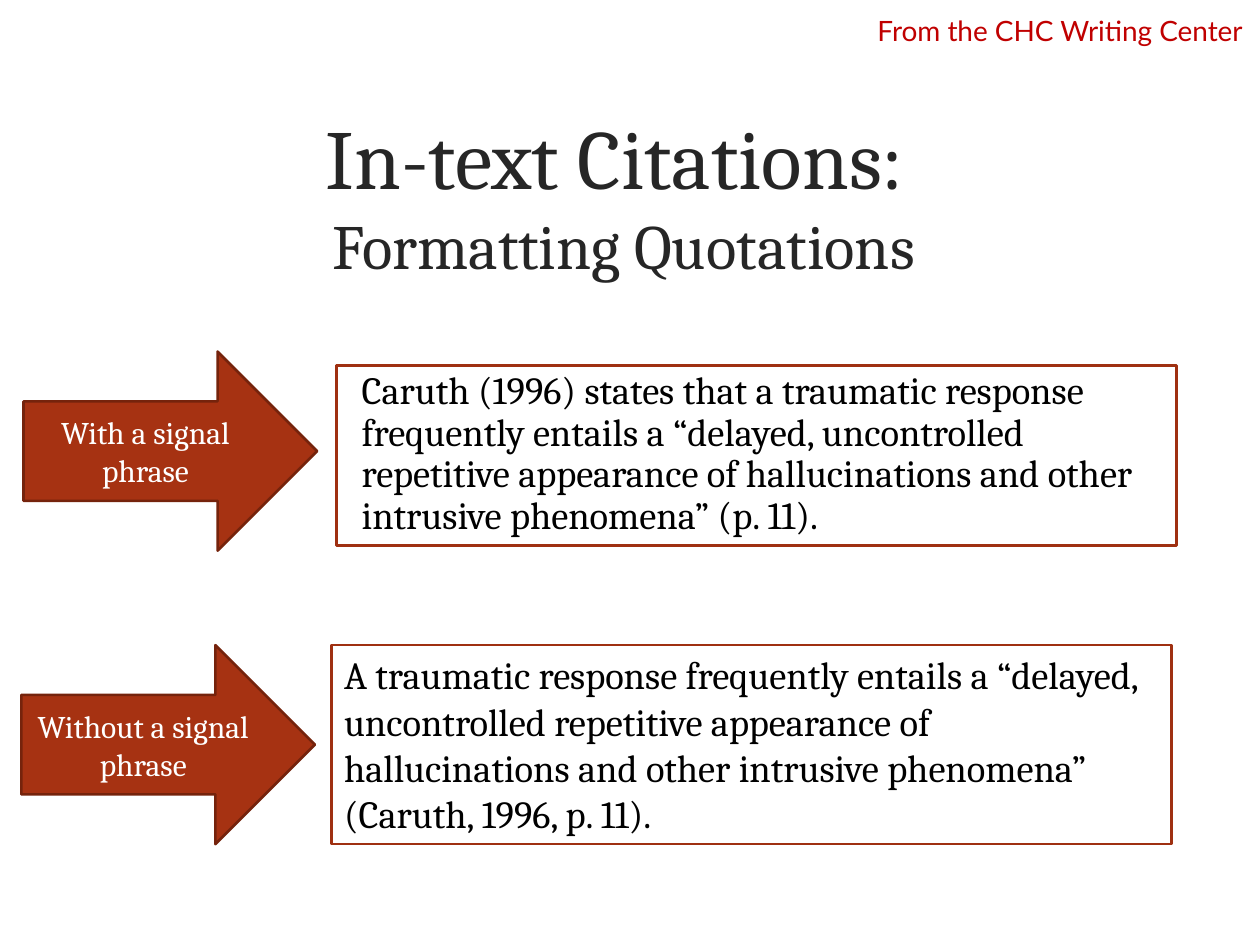
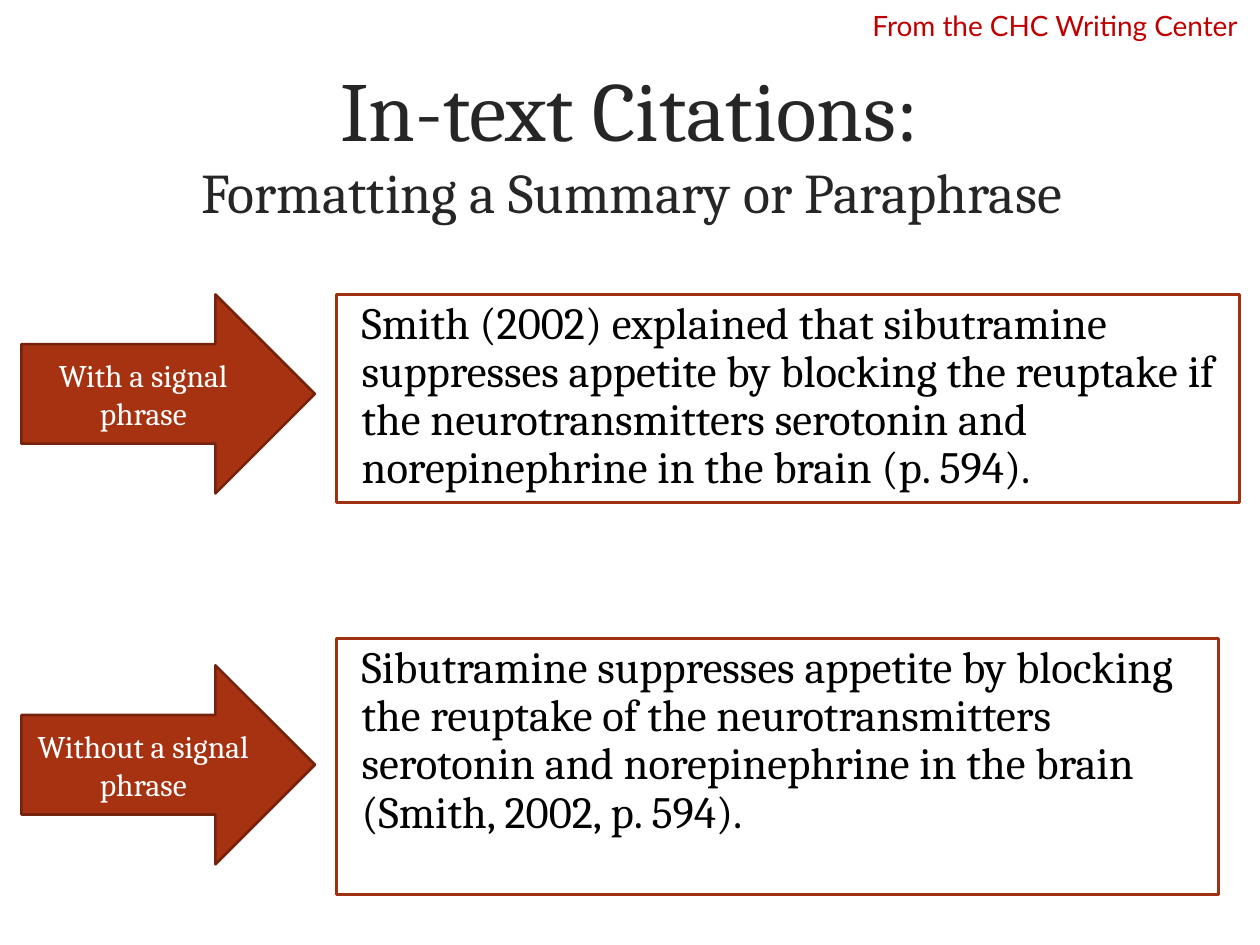
from pptx import Presentation
from pptx.dml.color import RGBColor
from pptx.enum.shapes import MSO_SHAPE
from pptx.enum.text import MSO_ANCHOR, MSO_AUTO_SIZE, PP_ALIGN
from pptx.util import Pt

SERIF, SANS = "Cambria", "Lato"
INK, BLACK, WHITE = "262626", "000000", "FFFFFF"
RUST, RUST_DARK, RUST_EDGE, CREDIT_RED = "A63212", "75230C", "9F3011", "C00000"
TITLE_ONLY = 5
ARROW_SIZE = (167.76, 113.76)
INSET = 7.2
INDENTED = 2 * INSET


def colour(hex_code):
    return RGBColor.from_string(hex_code)


def style_run(run, size, hex_code, font=SERIF):
    run.font.size = Pt(size)
    run.font.name = font
    run.font.color.rgb = colour(hex_code)


def add_title(slide, box, subject, subject_size):
    title = slide.shapes.title
    title.left, title.top, title.width, title.height = map(Pt, box)
    frame = title.text_frame
    frame.text = f"In-text Citations: \v{subject}"
    frame.auto_size = MSO_AUTO_SIZE.NONE
    frame.vertical_anchor = MSO_ANCHOR.MIDDLE
    paragraph = frame.paragraphs[0]
    paragraph.alignment = PP_ALIGN.CENTER
    for run, size in zip(paragraph.runs, (48, subject_size)):
        style_run(run, size, INK)


def add_credit(slide, left, top):
    frame = slide.shapes.add_textbox(*map(Pt, (left, top, 228.24, 28.8))).text_frame
    frame.word_wrap = True
    frame.vertical_anchor = MSO_ANCHOR.MIDDLE
    frame.text = "From the CHC Writing Center"
    frame.paragraphs[0].alignment = PP_ALIGN.CENTER
    style_run(frame.paragraphs[0].runs[0], 16, CREDIT_RED, SANS)


def add_panel(slide, preset, box, fill, edge, text, size, text_colour):
    """Add a filled, outlined shape with one paragraph; return the shape."""
    panel = slide.shapes.add_shape(preset, *map(Pt, box))
    panel.shadow.inherit = False
    panel.fill.solid()
    panel.fill.fore_color.rgb = colour(fill)
    panel.line.color.rgb = colour(edge)
    panel.line.width = Pt(1.5)
    frame = panel.text_frame
    frame.word_wrap = True
    frame.text = text
    style_run(frame.paragraphs[0].runs[0], size, text_colour)
    return panel


def add_arrow(slide, left, top, label):
    arrow = add_panel(slide, MSO_SHAPE.RIGHT_ARROW, (left, top, *ARROW_SIZE),
                      RUST, RUST_DARK, label, 18, WHITE)
    arrow.text_frame.vertical_anchor = MSO_ANCHOR.MIDDLE
    arrow.text_frame.paragraphs[0].alignment = PP_ALIGN.CENTER


def add_example(slide, box, text, size, inset=INDENTED, spacing=0.9):
    example = add_panel(slide, MSO_SHAPE.RECTANGLE, box, WHITE, RUST_EDGE,
                        text, size, BLACK)
    frame = example.text_frame
    frame.margin_left = Pt(inset)
    frame.vertical_anchor = MSO_ANCHOR.TOP
    frame.paragraphs[0].alignment = PP_ALIGN.LEFT
    frame.paragraphs[0].line_spacing = spacing


def add_citation_slide(deck, title, credit, arrows, examples):
    slide = deck.slides.add_slide(deck.slide_layouts[TITLE_ONLY])
    add_title(slide, *title)
    add_credit(slide, *credit)
    labels = ("With a signal phrase", "Without a signal phrase")
    for label, corner, example in zip(labels, arrows, examples):
        add_arrow(slide, *corner, label)
        add_example(slide, *example)


def main():
    deck = Presentation()
    deck.slide_width, deck.slide_height = Pt(720), Pt(540)
    add_citation_slide(
        deck,
        title=((39.6, 54, 633.6, 113.76), "Formatting Quotations", 36),
        credit=(491.76, 2.88),
        arrows=((13.5, 200.88), (12.24, 368.64)),
        examples=(
            ((192.24, 208.8, 480, 102.96),
             "Caruth (1996) states that a traumatic response frequently entails a "
             "“delayed, uncontrolled repetitive appearance of hallucinations and "
             "other intrusive phenomena” (p. 11).", 22),
            ((189.5, 368.64, 480, 113.76),
             "A traumatic response frequently entails a “delayed, uncontrolled "
             "repetitive appearance of hallucinations and other intrusive "
             "phenomena” (Caruth, 1996, p. 11).", 22, INSET, 1.0),
        ),
    )
    add_citation_slide(
        deck,
        title=((48.24, 23.76, 632.88, 113.76), "Formatting a Summary or Paraphrase ", 32),
        credit=(488.88, 0),
        arrows=((12.24, 168.24), (12.24, 380.16)),
        examples=(
            ((192.24, 168.24, 516, 118.8),
             "Smith (2002) explained that sibutramine suppresses appetite by blocking "
             "the reuptake if the neurotransmitters serotonin and norepinephrine in "
             "the brain (p. 594).", 25.5),
            ((192.24, 365, 504, 146.16),
             "Sibutramine suppresses appetite by blocking the reuptake of the "
             "neurotransmitters serotonin and norepinephrine in the brain "
             "(Smith, 2002, p. 594).", 25.5),
        ),
    )
    deck.save("out.pptx")


if __name__ == "__main__":
    main()
